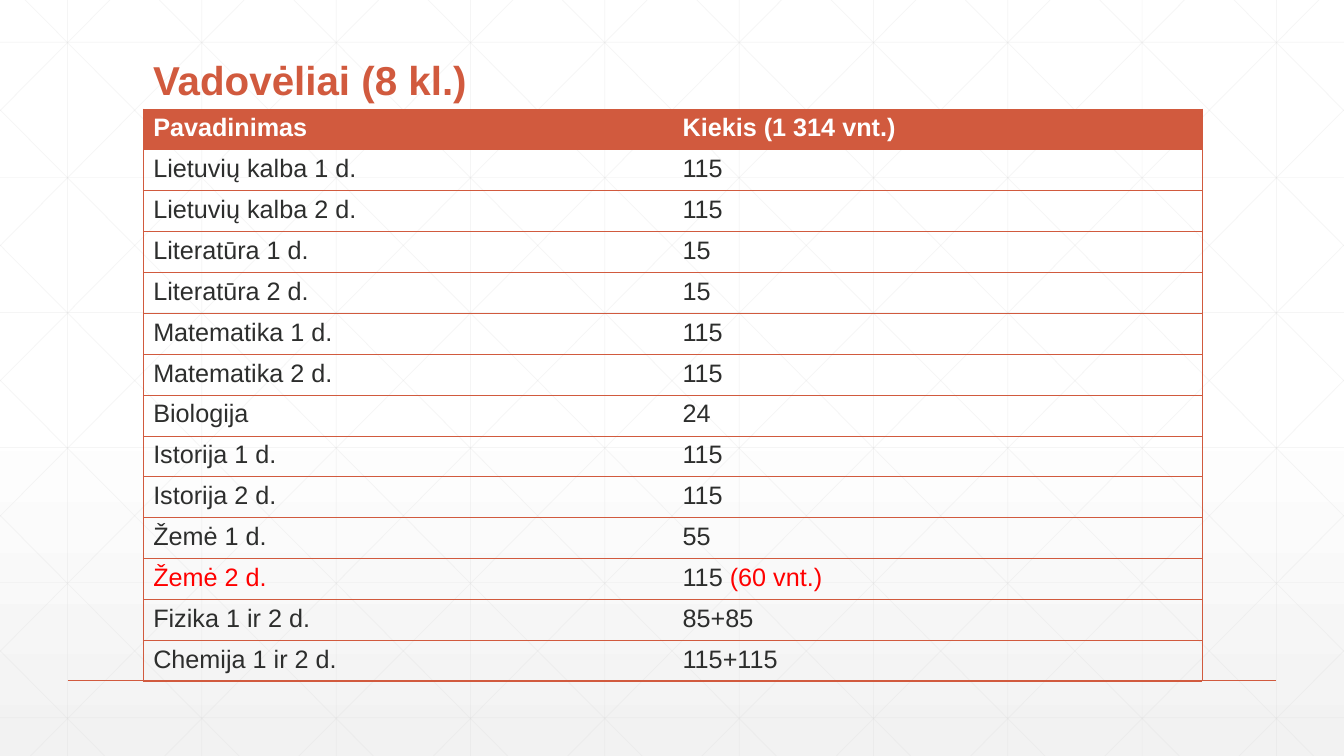
"""Build the slide that lists the textbooks of the eighth grade."""
from lxml import etree
from pptx import Presentation
from pptx import util as u
from pptx.dml.color import RGBColor
from pptx.enum import shapes, text
from pptx.oxml import ns

WIDTH, HEIGHT = 13.33, 7.5
FONT = "Arial"
ACCENT, INK, ALERT, WHITE = "D15A3E", "2D2E2D", "FF0000", "FFFFFF"
GRID, SHADE = "D9D9D9", "F2F2F2"

TITLE = "Vadovėliai (8 kl.)"
HEADER = ("Pavadinimas", "Kiekis (1 314 vnt.)")
BOOKS = [
    ("Lietuvių kalba 1 d.", "115"),
    ("Lietuvių kalba 2 d.", "115"),
    ("Literatūra 1 d.", "15"),
    ("Literatūra 2 d.", "15"),
    ("Matematika 1 d.", "115"),
    ("Matematika 2 d.", "115"),
    ("Biologija", "24"),
    ("Istorija 1 d.", "115"),
    ("Istorija 2 d.", "115"),
    ("Žemė 1 d.", "55"),
    ("Žemė 2 d.", "115 (60 vnt.)"),
    ("Fizika 1 ir 2 d.", "85+85"),
    ("Chemija 1 ir 2 d.", "115+115"),
]
ALERTS = ("Žemė 2 d.", "(60 vnt.)")

LEFT, TABLE_TOP, TABLE_WIDTH, TABLE_HEIGHT = 1.42, 1.08, 10.5, 5.68
TITLE_HEIGHT = 0.53
MARGIN, RULE_TOP = 0.67, 6.75
COLUMN_STEP, ROW_STEP, FIRST_ROW = (WIDTH - 2 * MARGIN) / 9, 1.34, 0.42
DIAGONAL_START, DIAGONAL_RUN = 0.25, 7.45


def color(value):
    """Turn a hex string into a colour."""
    return RGBColor.from_string(value)


def add_line(slide, start, end, value, width, opacity=None):
    """Draw a straight line without a shadow."""
    points = [u.Inches(length) for length in (*start, *end)]
    line = slide.shapes.add_connector(shapes.MSO_CONNECTOR.STRAIGHT, *points)
    line.line.color.rgb = color(value)
    line.line.width = u.Pt(width)
    if opacity:
        fill = line._element.spPr.find(".//" + ns.qn("a:srgbClr"))
        etree.SubElement(fill, ns.qn("a:alpha"), val=str(opacity * 1000))
    etree.SubElement(line._element.spPr, ns.qn("a:effectLst"))


def add_backdrop(slide):
    """Shade the background and draw its grid and diagonals."""
    fill = slide.background.fill
    fill.gradient()
    fill.gradient_angle = 270
    for stop, (position, value) in zip(fill.gradient_stops, [(0.53, WHITE), (1, SHADE)]):
        stop.position = position
        stop.color.rgb = color(value)
    lines = []
    for column in range(10):
        x = MARGIN + column * COLUMN_STEP
        lines.append(((x, 0), (x, HEIGHT)))
    for row in range(6):
        y = FIRST_ROW + row * ROW_STEP
        lines.append(((0, y), (WIDTH, y)))
    for step in range(-5, 10):
        x = DIAGONAL_START + step * COLUMN_STEP
        shares = max(0, -x / DIAGONAL_RUN), min(1, (WIDTH - x) / DIAGONAL_RUN)
        ends = [(x + share * DIAGONAL_RUN, share * HEIGHT) for share in shares]
        lines += [ends, [(WIDTH - end_x, end_y) for end_x, end_y in ends]]
    for start, end in lines:
        add_line(slide, start, end, GRID, 0.5, 25)
    add_line(slide, (MARGIN, RULE_TOP), (WIDTH - MARGIN, RULE_TOP), ACCENT, 1)


def style_run(run, size, value, bold):
    """Set the font of a run."""
    run.font.name, run.font.size, run.font.bold = FONT, u.Pt(size), bold
    run.font.color.rgb = color(value)


def add_title(slide):
    """Place the title just above the table."""
    box = slide.shapes.add_textbox(u.Inches(LEFT), u.Inches(TABLE_TOP - TITLE_HEIGHT),
                                   u.Inches(TABLE_WIDTH), u.Inches(TITLE_HEIGHT))
    frame = box.text_frame
    frame.word_wrap = True
    frame.vertical_anchor = text.MSO_ANCHOR.BOTTOM
    frame.text = TITLE
    frame.paragraphs[0].line_spacing = 0.9
    style_run(frame.paragraphs[0].runs[0], 28.8, ACCENT, True)


def set_borders(cell, sides):
    """Draw the named sides of a cell and hide the others."""
    properties = cell._tc.get_or_add_tcPr()
    for side in "LRTB":
        border = etree.SubElement(properties, ns.qn("a:ln" + side), w=str(u.Pt(0.5)))
        if side in sides:
            fill = etree.SubElement(border, ns.qn("a:solidFill"))
            etree.SubElement(fill, ns.qn("a:srgbClr"), val=ACCENT)
        else:
            etree.SubElement(border, ns.qn("a:noFill"))


def fill_cell(cell, content, is_header):
    """Write a cell, with the alert parts in red."""
    if is_header:
        cell.fill.solid()
        cell.fill.fore_color.rgb = color(ACCENT)
    else:
        cell.fill.background()
    alert = next((part for part in ALERTS if content.endswith(part)), "")
    paragraph = cell.text_frame.paragraphs[0]
    for part, value in ((content.removesuffix(alert), WHITE if is_header else INK),
                        (alert, ALERT)):
        if part:
            run = paragraph.add_run()
            run.text = part
            style_run(run, 18, value, is_header)


def add_book_table(slide):
    """Place the table of books and quantities."""
    rows = [HEADER, *BOOKS]
    table = slide.shapes.add_table(len(rows), len(HEADER), u.Inches(LEFT), u.Inches(TABLE_TOP),
                                   u.Inches(TABLE_WIDTH), u.Inches(TABLE_HEIGHT)).table
    table.horz_banding = False
    for row, contents in enumerate(rows):
        for column, content in enumerate(contents):
            cell = table.cell(row, column)
            set_borders(cell, "LR"[column] + "TB")
            fill_cell(cell, content, row == 0)


def main():
    """Build and save the presentation."""
    presentation = Presentation()
    presentation.slide_width = u.Inches(WIDTH)
    presentation.slide_height = u.Inches(HEIGHT)
    slide = presentation.slides.add_slide(presentation.slide_layouts[6])
    add_backdrop(slide)
    add_title(slide)
    add_book_table(slide)
    presentation.save("out.pptx")


if __name__ == "__main__":
    main()
